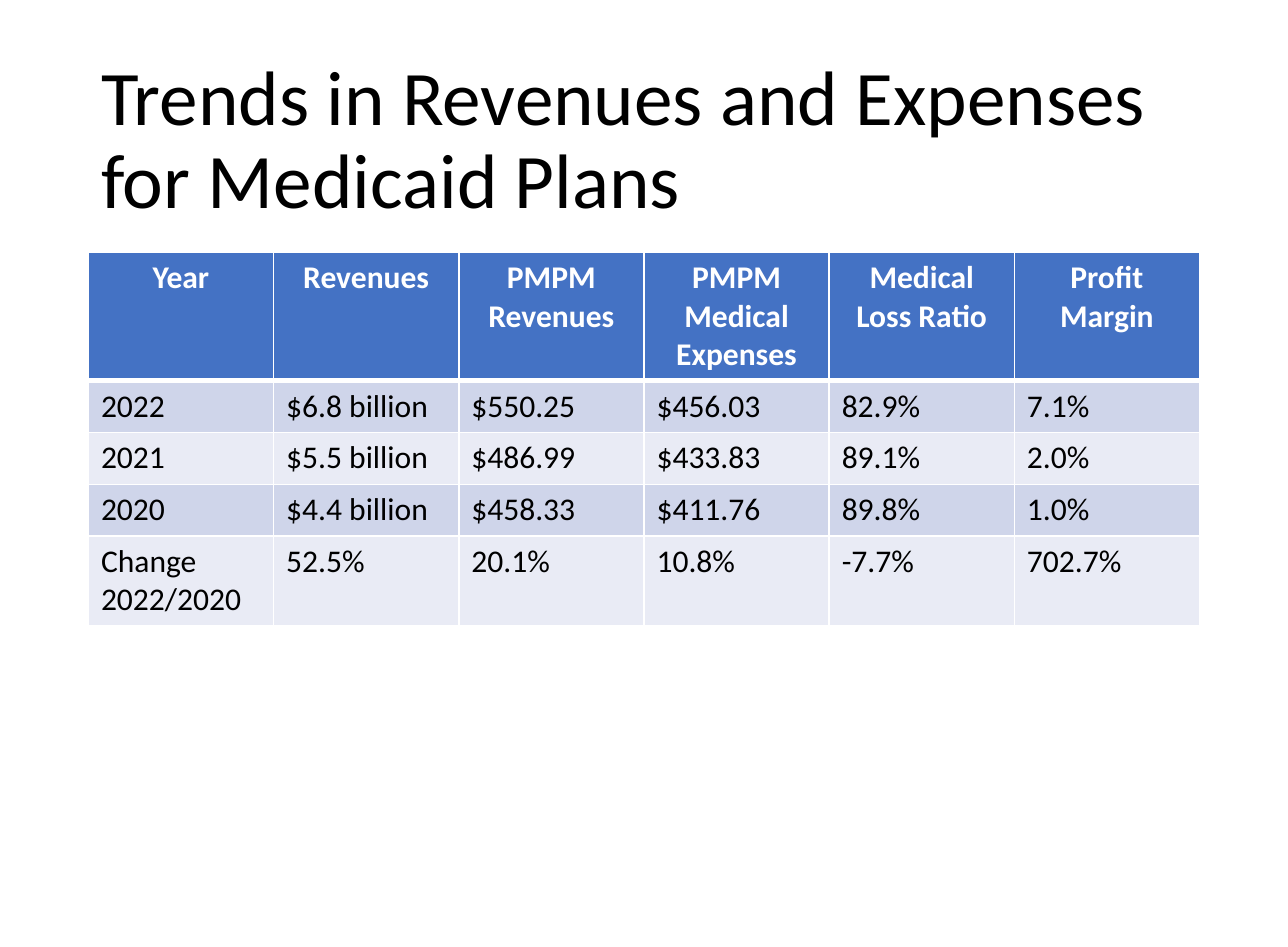
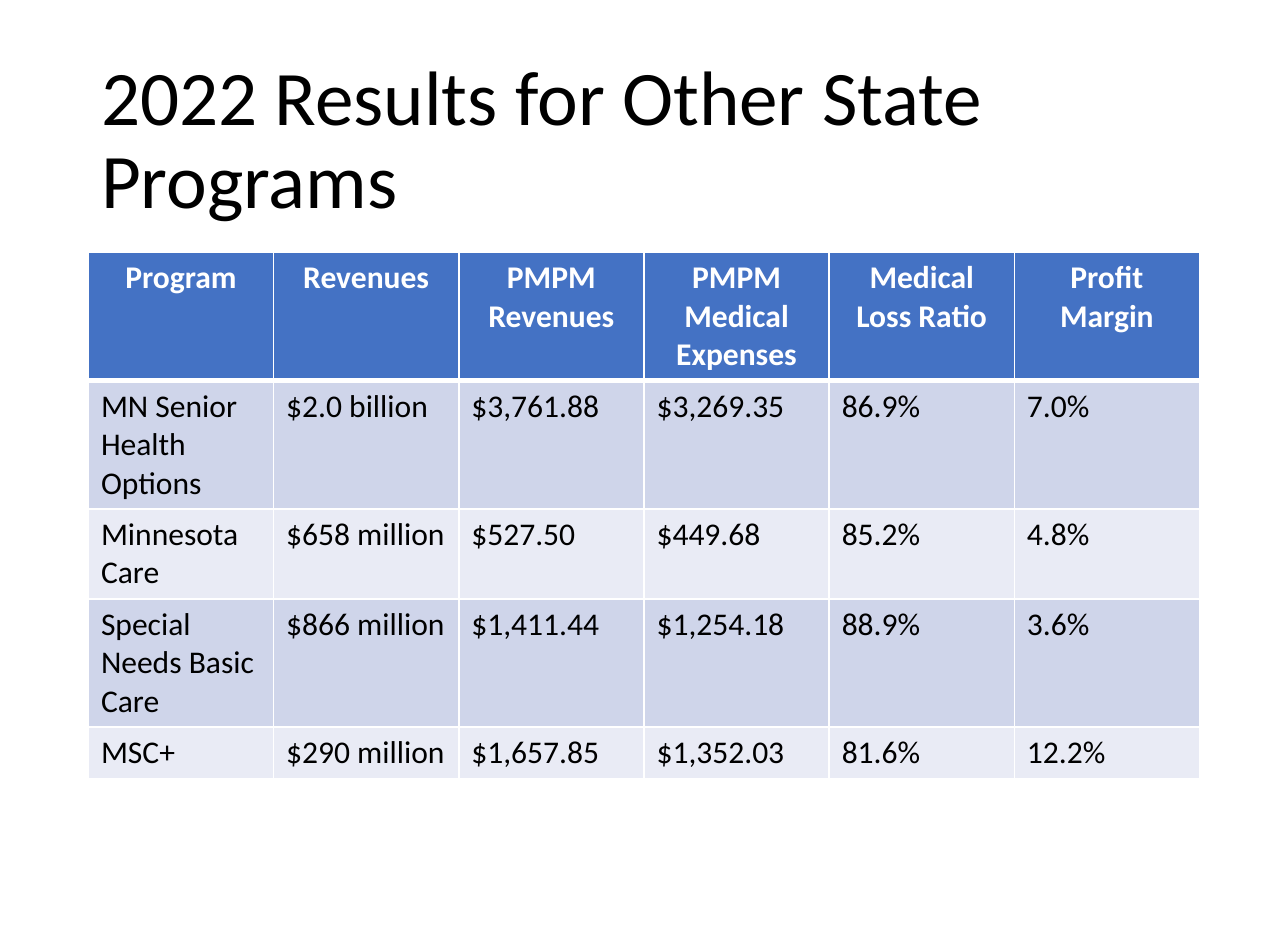
from lxml import etree
from pptx import Presentation
from pptx.dml.color import RGBColor
from pptx.enum.text import MSO_ANCHOR, MSO_AUTO_SIZE, PP_ALIGN
from pptx.oxml.ns import qn
from pptx.util import Inches, Pt

LEFT, CENTER = PP_ALIGN.LEFT, PP_ALIGN.CENTER
MIDDLE = MSO_ANCHOR.MIDDLE
NO_AUTOFIT = MSO_AUTO_SIZE.NONE
TITLE_ONLY = 5

FONT = "Calibri"
BLACK, WHITE = "000000", "FFFFFF"
HEADER_FILL = "4472C4"
BAND_FILLS = ("CFD5EA", "E9EBF5")
GRID_PT, HEADER_RULE_PT = 1, 3

TITLE_BOX = (0.7, 0.4, 8.8, 1.45)
TABLE_BOX = (0.7, 2, 8.8)
ROW_HEIGHT = 0.41

MEASURES = ["Revenues", "PMPM Revenues", "PMPM Medical Expenses",
            "Medical Loss Ratio", "Profit Margin"]

MEDICAID_TRENDS = [
    ["Year"] + MEASURES,
    ["2022", "$6.8 billion", "$550.25", "$456.03", "82.9%", "7.1%"],
    ["2021", "$5.5 billion", "$486.99", "$433.83", "89.1%", "2.0%"],
    ["2020", "$4.4 billion", "$458.33", "$411.76", "89.8%", "1.0%"],
    ["Change 2022/2020", "52.5%", "20.1%", "10.8%", "-7.7%", "702.7%"],
]

STATE_PROGRAMS = [
    ["Program"] + MEASURES,
    ["MN Senior Health Options", "$2.0 billion", "$3,761.88", "$3,269.35", "86.9%", "7.0%"],
    ["Minnesota\nCare", "$658 million", "$527.50", "$449.68", "85.2%", "4.8%"],
    ["Special Needs Basic Care", "$866 million", "$1,411.44", "$1,254.18", "88.9%", "3.6%"],
    ["MSC+", "$290 million", "$1,657.85", "$1,352.03", "81.6%", "12.2%"],
]


def rgb(color):
    return RGBColor.from_string(color)


def add_run(paragraph, text, size, color, bold=False):
    run = paragraph.add_run()
    run.text = text
    run.font.name = FONT
    run.font.size = Pt(size)
    run.font.bold = bold
    run.font.color.rgb = rgb(color)


def set_borders(cell, top, bottom):
    """Draw white cell borders; must run before the cell gets its fill."""
    properties = cell._tc.get_or_add_tcPr()
    widths = {"a:lnL": GRID_PT, "a:lnR": GRID_PT, "a:lnT": top, "a:lnB": bottom}
    for side, width in widths.items():
        line = etree.SubElement(properties, qn(side), w=str(Pt(width)))
        fill = etree.SubElement(line, qn("a:solidFill"))
        etree.SubElement(fill, qn("a:srgbClr"), val=WHITE)


def place_title(slide, text, box):
    title = slide.shapes.title
    title.left, title.top, title.width, title.height = map(Inches, box)
    frame = title.text_frame
    frame.word_wrap = True
    frame.auto_size = NO_AUTOFIT
    frame.vertical_anchor = MIDDLE
    paragraph = frame.paragraphs[0]
    paragraph.alignment = LEFT
    paragraph.line_spacing = 0.9
    add_run(paragraph, text, 44, BLACK)


def fill_cell(cell, text, row):
    is_header = row == 0
    set_borders(cell,
                top=HEADER_RULE_PT if row == 1 else GRID_PT,
                bottom=HEADER_RULE_PT if is_header else GRID_PT)
    cell.fill.solid()
    cell.fill.fore_color.rgb = rgb(HEADER_FILL if is_header else BAND_FILLS[(row - 1) % 2])
    frame = cell.text_frame
    for index, line in enumerate(text.split("\n")):
        paragraph = frame.add_paragraph() if index else frame.paragraphs[0]
        paragraph.alignment = CENTER if is_header else LEFT
        add_run(paragraph, line, 18, WHITE if is_header else BLACK, bold=is_header)


def place_results(slide, rows, box):
    left, top, width = box
    columns = len(rows[0])
    table = slide.shapes.add_table(
        len(rows), columns, Inches(left), Inches(top),
        Inches(width), Inches(ROW_HEIGHT * len(rows))).table
    for column in table.columns:
        column.width = Inches(width / columns)
    for row, texts in enumerate(rows):
        for column, text in enumerate(texts):
            fill_cell(table.cell(row, column), text, row)


def add_results_slide(deck, title, rows):
    slide = deck.slides.add_slide(deck.slide_layouts[TITLE_ONLY])
    place_title(slide, title, TITLE_BOX)
    place_results(slide, rows, TABLE_BOX)


def main():
    deck = Presentation()
    deck.slide_width, deck.slide_height = Inches(10.2), Inches(7.5)
    add_results_slide(deck, "Trends in Revenues and Expenses for Medicaid Plans",
                      MEDICAID_TRENDS)
    add_results_slide(deck, "2022 Results for Other State Programs", STATE_PROGRAMS)
    deck.save("out.pptx")


if __name__ == "__main__":
    main()
